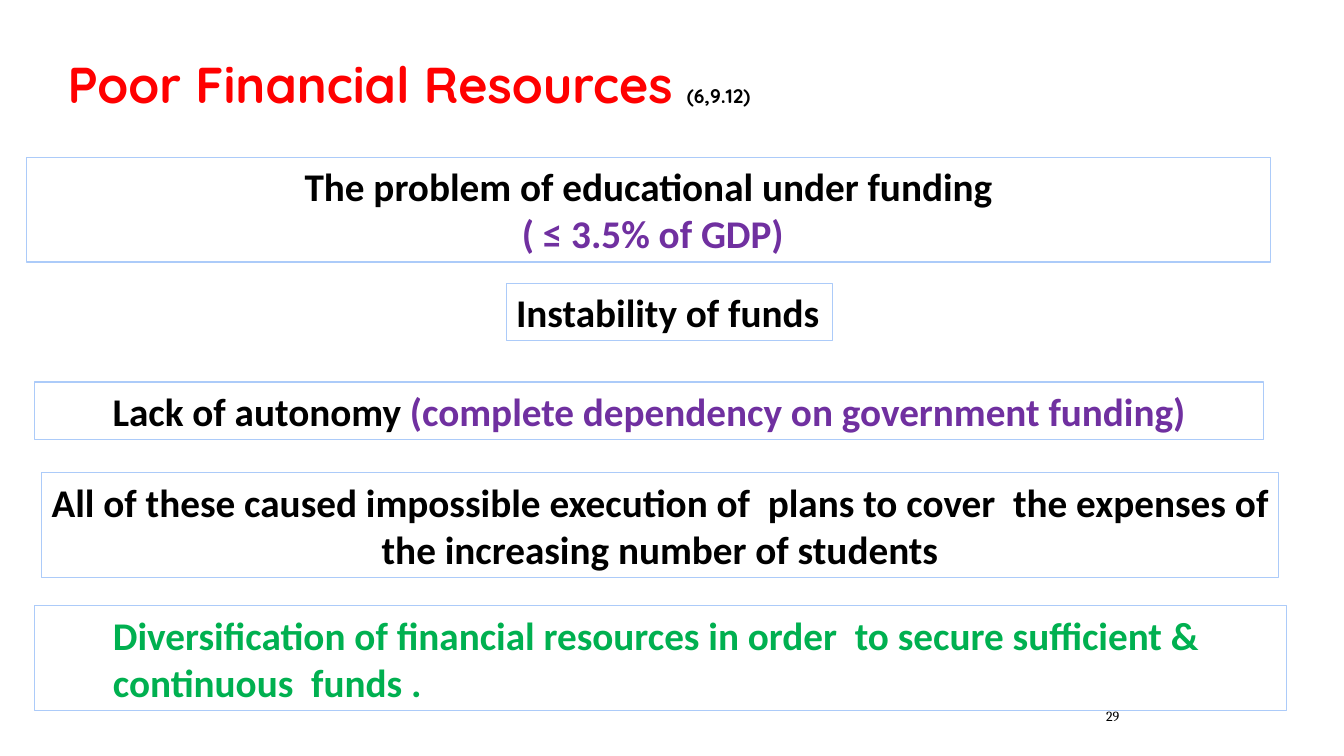
from dataclasses import dataclass

from pptx import Presentation
from pptx.dml.color import RGBColor
from pptx.enum import shapes, text
from pptx.util import Inches, Pt

BLACK, RED, PURPLE, GREEN = "000000", "FF0000", "7030A0", "00B050"
WHITE, PALE_BLUE = "FFFFFF", "ACCBF9"
LEFT, CENTER, RIGHT = text.PP_ALIGN.LEFT, text.PP_ALIGN.CENTER, text.PP_ALIGN.RIGHT


@dataclass
class Statement:
    """A framed statement: each line is a list of (text, colour) runs."""
    left: float
    top: float
    width: float
    height: float
    lines: list[list[tuple[str, str]]]
    align: text.PP_ALIGN = CENTER
    fill: str | None = None
    indent: float = 0.1
    wrap: bool = True


STATEMENTS = [
    Statement(0.26, 1.56, 12.34, 1.04, [
        [("The problem of educational under funding", BLACK)],
        [(" ", BLACK), ("( ≤ 3.5% of GDP)", PURPLE)]]),
    Statement(5.02, 2.81, 3.24, 0.57, [[("Instability of funds", BLACK)]],
              align=LEFT, wrap=False),
    Statement(0.34, 3.79, 12.19, 0.57, [
        [("Lack of autonomy ", BLACK),
         ("(complete dependency on government funding)", PURPLE)]]),
    Statement(0.41, 4.69, 12.27, 1.04, [
        [("All of these caused impossible execution of  plans to cover  "
          "the expenses of the increasing number of students", BLACK)]]),
    Statement(0.34, 6.01, 12.42, 1.04, [
        [("Diversification of financial resources in order  to secure "
          "sufficient &  continuous  funds .", GREEN)]],
              align=LEFT, fill=WHITE, indent=0.78),
]


def rgb(value: str) -> RGBColor:
    return RGBColor.from_string(value)


def add_run(p, content: str, *, size: float, font: str, color: str = BLACK,
            bold: bool = False) -> None:
    r = p.add_run()
    r.text = content
    r.font.size = Pt(size)
    r.font.name = font
    r.font.bold = bold
    r.font.color.rgb = rgb(color)


def add_statement(s, item: Statement) -> None:
    sp = s.shapes.add_shape(
        shapes.MSO_SHAPE.RECTANGLE, Inches(item.left), Inches(item.top),
        Inches(item.width), Inches(item.height))
    sp.shadow.inherit = False
    sp.line.color.rgb = rgb(PALE_BLUE)
    sp.line.width = Pt(0.75)
    if item.fill:
        sp.fill.solid()
        sp.fill.fore_color.rgb = rgb(item.fill)
    else:
        sp.fill.background()
    tf = sp.text_frame
    tf.word_wrap = item.wrap
    tf.vertical_anchor = text.MSO_ANCHOR.MIDDLE
    tf.margin_left = Inches(item.indent)
    for i, line in enumerate(item.lines):
        p = tf.add_paragraph() if i else tf.paragraphs[0]
        p.alignment = item.align
        for content, color in line:
            add_run(p, content, size=28, font="Calibri", color=color, bold=True)


def add_title(s) -> None:
    sp = s.shapes.title
    sp.left, sp.top = Inches(0.57), Inches(0)
    sp.width, sp.height = Inches(9.5), Inches(1.17)
    tf = sp.text_frame
    tf.word_wrap = True
    tf.auto_size = text.MSO_AUTO_SIZE.NONE
    tf.vertical_anchor = text.MSO_ANCHOR.BOTTOM
    p = tf.paragraphs[0]
    p.alignment = LEFT
    p.line_spacing = 0.8
    add_run(p, "Poor Financial Resources ", size=36, font="Quicksand",
            color=RED, bold=True)
    add_run(p, "(6,9.12)", size=14, font="Quicksand", bold=True)


def add_page_number(s) -> None:
    sp = s.shapes.add_textbox(Inches(9.87), Inches(6.95), Inches(1.33), Inches(0.3))
    tf = sp.text_frame
    tf.word_wrap = True
    tf.vertical_anchor = text.MSO_ANCHOR.MIDDLE
    p = tf.paragraphs[0]
    p.alignment = RIGHT
    add_run(p, "29", size=10, font="Cambria")


def main() -> None:
    prs = Presentation()
    prs.slide_width, prs.slide_height = Inches(13.33), Inches(7.5)
    s = prs.slides.add_slide(prs.slide_layouts[5])

    # Heading
    add_title(s)

    # Framed statements
    for item in STATEMENTS:
        add_statement(s, item)

    # Page number
    add_page_number(s)
    prs.save("out.pptx")


if __name__ == "__main__":
    main()
